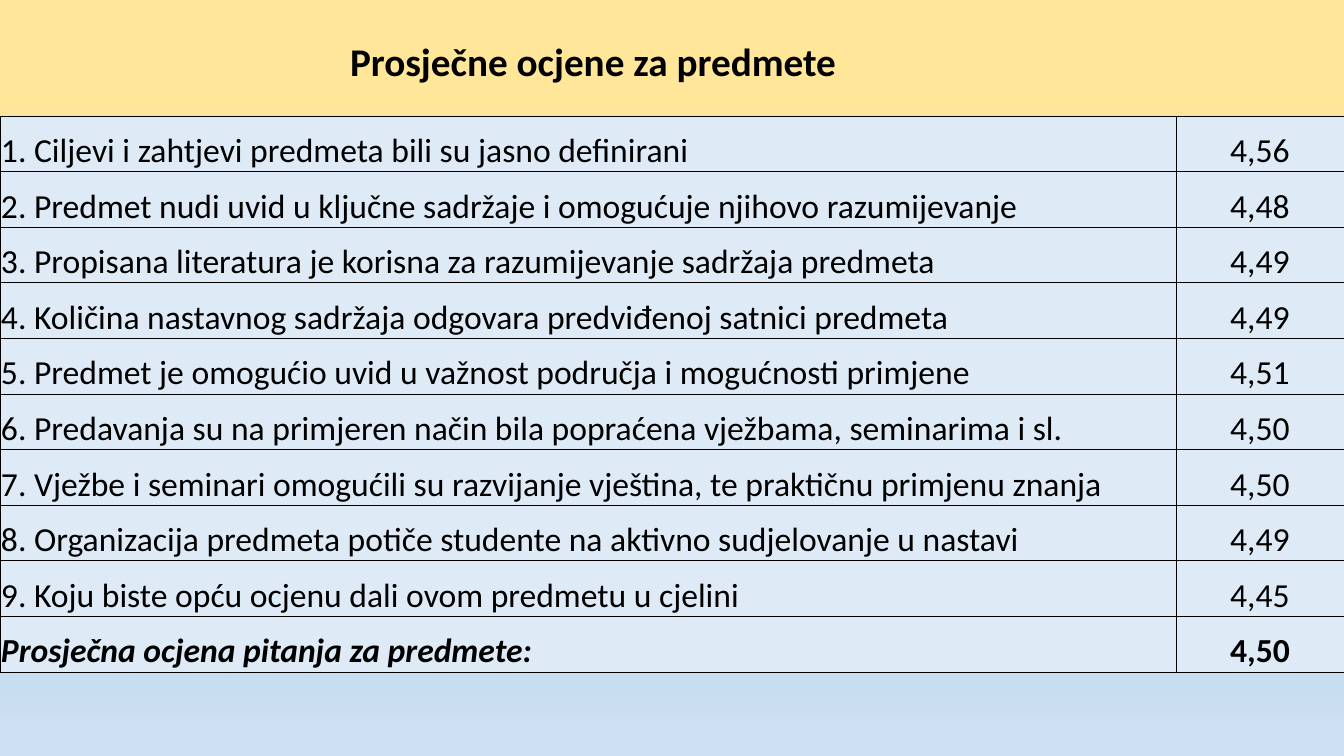
import dataclasses

import lxml.etree
import pptx
import pptx.dml.color
import pptx.enum.text
import pptx.oxml.ns
import pptx.util

SCALE = 12192000 / 1344
FONT = "Calibri"
COLORS = {"ink": "000000", "cell": "DEEBF7", "sand": "FFE699", "blue": "B5D2EC", "pale": "CEE1F2"}
STOPS = [(13, "sand"), (48, "blue"), (67, "blue"), (100, "pale")]
ALIGN = pptx.enum.text.PP_ALIGN
ANCHOR = pptx.enum.text.MSO_ANCHOR
qn = pptx.oxml.ns.qn


@dataclasses.dataclass
class Grade:
    label: str
    score: str
    total: bool = False


GRADES = [
    Grade("1. Ciljevi i zahtjevi predmeta bili su jasno definirani", "4,56"),
    Grade("2. Predmet nudi uvid u ključne sadržaje i omogućuje njihovo razumijevanje", "4,48"),
    Grade("3. Propisana literatura je korisna za razumijevanje sadržaja predmeta", "4,49"),
    Grade("4. Količina nastavnog sadržaja odgovara predviđenoj satnici predmeta", "4,49"),
    Grade("5. Predmet je omogućio uvid u važnost područja i mogućnosti primjene", "4,51"),
    Grade("6. Predavanja su na primjeren način bila popraćena vježbama, seminarima i sl.", "4,50"),
    Grade("7. Vježbe i seminari omogućili su razvijanje vještina, te praktičnu primjenu znanja", "4,50"),
    Grade("8. Organizacija predmeta potiče studente na aktivno sudjelovanje u nastavi", "4,49"),
    Grade("9. Koju biste opću ocjenu dali ovom predmetu u cjelini", "4,45"),
    Grade("Prosječna ocjena pitanja za predmete:", "4,50", True),
]


def px(count: int) -> pptx.util.Emu:
    return pptx.util.Emu(round(count * SCALE))


def rgb(name: str) -> pptx.dml.color.RGBColor:
    return pptx.dml.color.RGBColor.from_string(COLORS[name])


def style(para, size: int, bold: bool, italic: bool, align: ALIGN) -> None:
    para.alignment = align
    font = para.font
    font.name, font.size = FONT, pptx.util.Pt(size)
    font.bold, font.italic = bold, italic
    font.color.rgb = rgb("ink")


def tint(parent, name: str) -> None:
    lxml.etree.SubElement(parent, qn("a:srgbClr"), val=COLORS[name])


def backdrop(slide) -> None:
    fill = slide.background.fill
    fill.gradient()
    fill.gradient_angle = 270
    stops = next(slide.element.iter(qn("a:gsLst")))
    for old in list(stops):
        stops.remove(old)
    for place, name in STOPS:
        tint(lxml.etree.SubElement(stops, qn("a:gs"), pos=str(place * 1000)), name)


def border(cell) -> None:
    props = cell._tc.get_or_add_tcPr()
    for side in "LRTB":
        line = lxml.etree.SubElement(props, qn(f"a:ln{side}"), w=str(pptx.util.Pt(0.5)))
        tint(lxml.etree.SubElement(line, qn("a:solidFill")), "ink")


def write(cell, text: str, bold: bool, italic: bool, align: ALIGN) -> None:
    cell.text = text
    cell.vertical_anchor = ANCHOR.BOTTOM
    cell.margin_left = cell.margin_right = cell.margin_top = px(1)
    cell.margin_bottom = 0
    border(cell)
    cell.fill.solid()
    cell.fill.fore_color.rgb = rgb("cell")
    style(cell.text_frame.paragraphs[0], 24, bold, italic, align)


def chart(slide) -> None:
    table = slide.shapes.add_table(len(GRADES), 2, 0, px(116), px(1344), px(556)).table
    table.first_row = table.horz_banding = False
    for column, width in zip(table.columns, (1176, 168)):
        column.width = px(width)
    for row, grade in zip(table.rows, GRADES):
        label, score = row.cells
        write(label, grade.label, grade.total, grade.total, ALIGN.LEFT)
        write(score, grade.score, grade.total, False, ALIGN.CENTER)


def head(slide) -> None:
    title = slide.shapes.title
    title.left, title.top, title.width, title.height = map(px, (340, 32, 511, 57))
    frame = title.text_frame
    frame.text = "Prosječne ocjene za predmete"
    frame.word_wrap = False
    frame.auto_size = pptx.enum.text.MSO_AUTO_SIZE.SHAPE_TO_FIT_TEXT
    frame.vertical_anchor = ANCHOR.TOP
    style(frame.paragraphs[0], 28, True, False, ALIGN.LEFT)


def main() -> None:
    deck = pptx.Presentation()
    deck.slide_width, deck.slide_height = px(1344), px(756)
    slide = deck.slides.add_slide(deck.slide_layouts[5])
    backdrop(slide)
    chart(slide)
    head(slide)
    deck.save("out.pptx")


if __name__ == "__main__":
    main()
